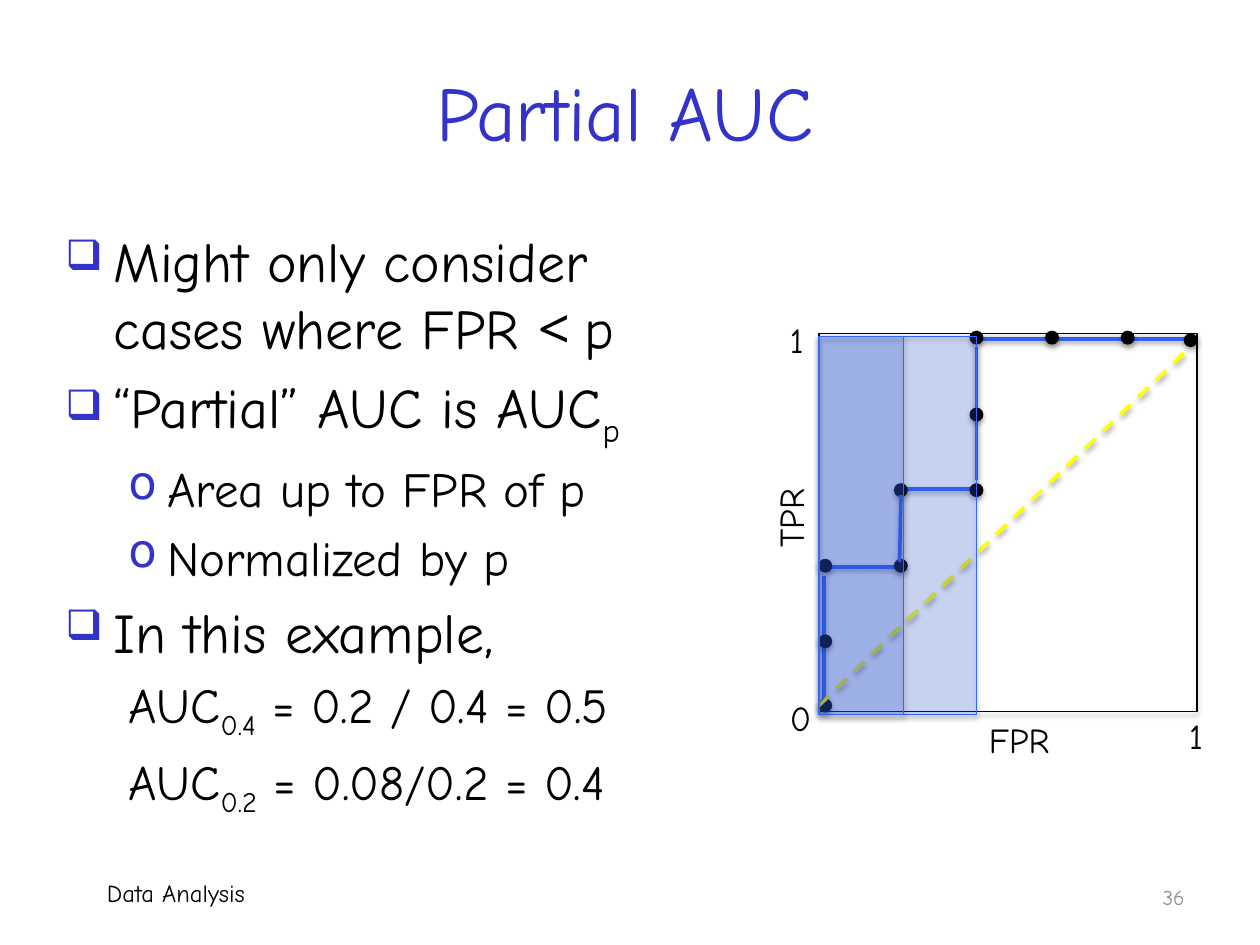
from lxml import etree
from pptx import Presentation
from pptx import util as u
from pptx.dml.color import RGBColor
from pptx.enum import dml, shapes, text
from pptx.oxml import ns

Inches, Pt = u.Inches, u.Pt

INDIGO = RGBColor(0x33, 0x33, 0xCC)
BLUE = RGBColor(0x33, 0x66, 0xFF)
YELLOW = RGBColor(0xFF, 0xFF, 0x00)
BLACK = RGBColor(0, 0, 0)
GREY = RGBColor(0x8C, 0x8C, 0x8C)
FONT = "Comic Neue"

# Body paragraphs: (bullet, level, size, runs); a run is (words, style)
PARAGRAPHS = [
    ("❑", 0, 32, [("Might only consider cases where FPR ", ""),
                  ("< ", "symbol"), ("p", "")]),
    ("❑", 0, 32, [("“Partial” AUC is AUC", ""), ("p", "sub")]),
    ("o", 1, 28, [("Area up to FPR of p", "")]),
    ("o", 1, 28, [("Normalized by p", "")]),
    ("❑", 0, 32, [("In this example,", "")]),
    ("", 1, 28, [("AUC", ""), ("0.4", "sub"), (" = 0.2 / 0.4 = 0.5", "")]),
    ("", 1, 28, [("AUC", ""), ("0.2", "sub"), (" = 0.08/0.2 = 0.4", "")]),
]

# Plot geometry, in inches from the plot's top left corner
POINTS = [(0.05, 2.95), (0.05, 2.44), (0.05, 1.84), (0.65, 1.84),
          (0.65, 1.24), (1.25, 1.24), (1.25, 0.64), (1.25, 0.03),
          (1.85, 0.03), (2.45, 0.03), (2.95, 0.05)]
STEPS = [(1.25, 0.04, 2.97, 0.04), (1.25, 0.1, 1.25, 1.16),
         (0.65, 1.23, 1.25, 1.23), (0.05, 1.85, 0.65, 1.85),
         (0.04, 1.92, 0.04, 2.98)]
RISER = (0.65, 1.28, 0.64, 1.81)
CHANCE = (0, 2.95, 2.95, 0.1)
DOT = 0.1


def add_xml(parent, tag, **attributes):
    return etree.SubElement(parent, ns.qn(tag), attributes)


def add_shadow(shape, opacity, distance):
    """Put a soft shadow straight below a shape or connector."""
    effects = add_xml(shape._element.spPr, "a:effectLst")
    outer = add_xml(effects, "a:outerShdw", blurRad=str(Pt(3.1)),
                    dist=str(Pt(distance)), dir="5400000", rotWithShape="0")
    colour = add_xml(outer, "a:srgbClr", val="000000")
    add_xml(colour, "a:alpha", val=str(opacity * 1000))


def add_span(para, words, size, colour=BLACK, font=FONT):
    span = para.add_run()
    span.text = words
    span.font.size = Pt(size)
    span.font.name = font
    span.font.color.rgb = colour
    return span


def add_label(page, box, words, size, colour=BLACK, wrap=False,
              align=text.PP_ALIGN.LEFT, anchor=text.MSO_ANCHOR.TOP):
    label = page.shapes.add_textbox(*map(Inches, box))
    frame = label.text_frame
    frame.word_wrap = wrap
    frame.vertical_anchor = anchor
    frame.paragraphs[0].alignment = align
    add_span(frame.paragraphs[0], words, size, colour)
    return label


def add_title(page, box):
    title = page.shapes.title
    title.left, title.top, title.width, title.height = map(Inches, box)
    frame = title.text_frame
    frame.auto_size = text.MSO_AUTO_SIZE.NONE
    frame.vertical_anchor = text.MSO_ANCHOR.MIDDLE
    frame.paragraphs[0].alignment = text.PP_ALIGN.CENTER
    add_span(frame.paragraphs[0], "Partial AUC", 44, INDIGO)


def set_bullet(para, bullet, level):
    margin, indent, size = [(0.38, -0.38, 75), (0.81, -0.31, 95)][level]
    properties = para._p.get_or_add_pPr()
    properties.set("marL", str(Inches(margin)))
    properties.set("indent", str(Inches(indent)))
    before = add_xml(properties, "a:spcBef")
    add_xml(before, "a:spcPct", val="20000")
    if not bullet:
        add_xml(properties, "a:buNone")
        return
    colour = add_xml(properties, "a:buClr")
    add_xml(colour, "a:srgbClr", val=str(INDIGO))
    add_xml(properties, "a:buSzPct", val=str(size * 1000))
    add_xml(properties, "a:buChar", char=bullet)


def add_body(page, box):
    frame = page.shapes.add_textbox(*map(Inches, box)).text_frame
    frame.word_wrap = True
    for index, (bullet, level, size, runs) in enumerate(PARAGRAPHS):
        para = frame.add_paragraph() if index else frame.paragraphs[0]
        para.level = level
        set_bullet(para, bullet, level)
        for words, style in runs:
            font = "Noto Sans" if style == "symbol" else FONT
            span = add_span(para, words, size, font=font)
            if style == "sub":
                span._r.get_or_add_rPr().set("baseline", "-25000")


def add_line(page, origin, ends, colour, dashed=False):
    left, top = origin
    x1, y1, x2, y2 = ends
    line = page.shapes.add_connector(
        shapes.MSO_CONNECTOR.STRAIGHT, Inches(left + x1), Inches(top + y1),
        Inches(left + x2), Inches(top + y2))
    line.line.color.rgb = colour
    line.line.width = Pt(2)
    if dashed:
        line.line.dash_style = dml.MSO_LINE.DASH
    add_shadow(line, 38, 1.6)


def add_figure(page, kind, box, outline, fill=None, opacity=100):
    figure = page.shapes.add_shape(kind, *map(Inches, box))
    figure.line.color.rgb = outline
    figure.line.width = Pt(0.75)
    if fill is None:
        figure.fill.background()
    else:
        figure.fill.solid()
        figure.fill.fore_color.rgb = fill
        if opacity < 100:
            colour = figure._element.spPr.find(".//" + ns.qn("a:srgbClr"))
            add_xml(colour, "a:alpha", val=str(opacity * 1000))
    add_shadow(figure, 35, 1.8)


def add_roc_plot(page, box):
    left, top, width, height = box
    origin = (left, top)
    rectangle = shapes.MSO_SHAPE.RECTANGLE

    # Stepped curve and frame
    for ends in STEPS:
        add_line(page, origin, ends, BLUE)
    add_figure(page, rectangle, box, BLACK)

    # Axis names and end values
    axis = add_label(page, (left - 0.58, top + 1.22, 0.71, 0.44), "TPR", 20)
    axis.rotation = 270
    for words, x, y, label_width in [
            ("FPR", 1.25, height, 0.69), ("1", 2.84, height - 0.03, 0.33),
            ("1", -0.33, -0.17, 0.33), ("0", -0.33, height - 0.17, 0.37)]:
        add_label(page, (left + x, top + y, label_width, 0.44), words, 20)

    # Curve points
    for x, y in POINTS:
        dot = (left + x - DOT / 2, top + y - DOT / 2, DOT, DOT)
        add_figure(page, shapes.MSO_SHAPE.OVAL, dot, BLACK, BLACK)

    # Middle riser and chance diagonal
    add_line(page, origin, RISER, BLUE)
    add_line(page, origin, CHANCE, YELLOW, dashed=True)

    # Shaded partial areas, p = 0.4 and p = 0.2
    for band in (1.25, 0.67):
        add_figure(page, rectangle, (left, top + 0.02, band, height),
                   BLUE, BLUE, opacity=20)


def add_footer(page, box):
    left, top, width, height = box
    add_label(page, (left, top, 4.42, height), "Data Analysis", 14, wrap=True)
    add_label(page, (left + width - 2.33, top, 2.33, 0.4), "36", 12, GREY,
              wrap=True, align=text.PP_ALIGN.RIGHT,
              anchor=text.MSO_ANCHOR.MIDDLE)


def main():
    deck = Presentation()
    deck.slide_width, deck.slide_height = Inches(10), Inches(7.5)
    page = deck.slides.add_slide(deck.slide_layouts[5])
    add_title(page, (0.75, 0.25, 8.42, 1.25))
    add_body(page, (0.42, 1.75, 5.33, 5))
    add_footer(page, (0.75, 6.92, 8.75, 0.42))
    add_roc_plot(page, (6.5, 2.65, 3, 3))
    deck.save("out.pptx")


if __name__ == "__main__":
    main()
